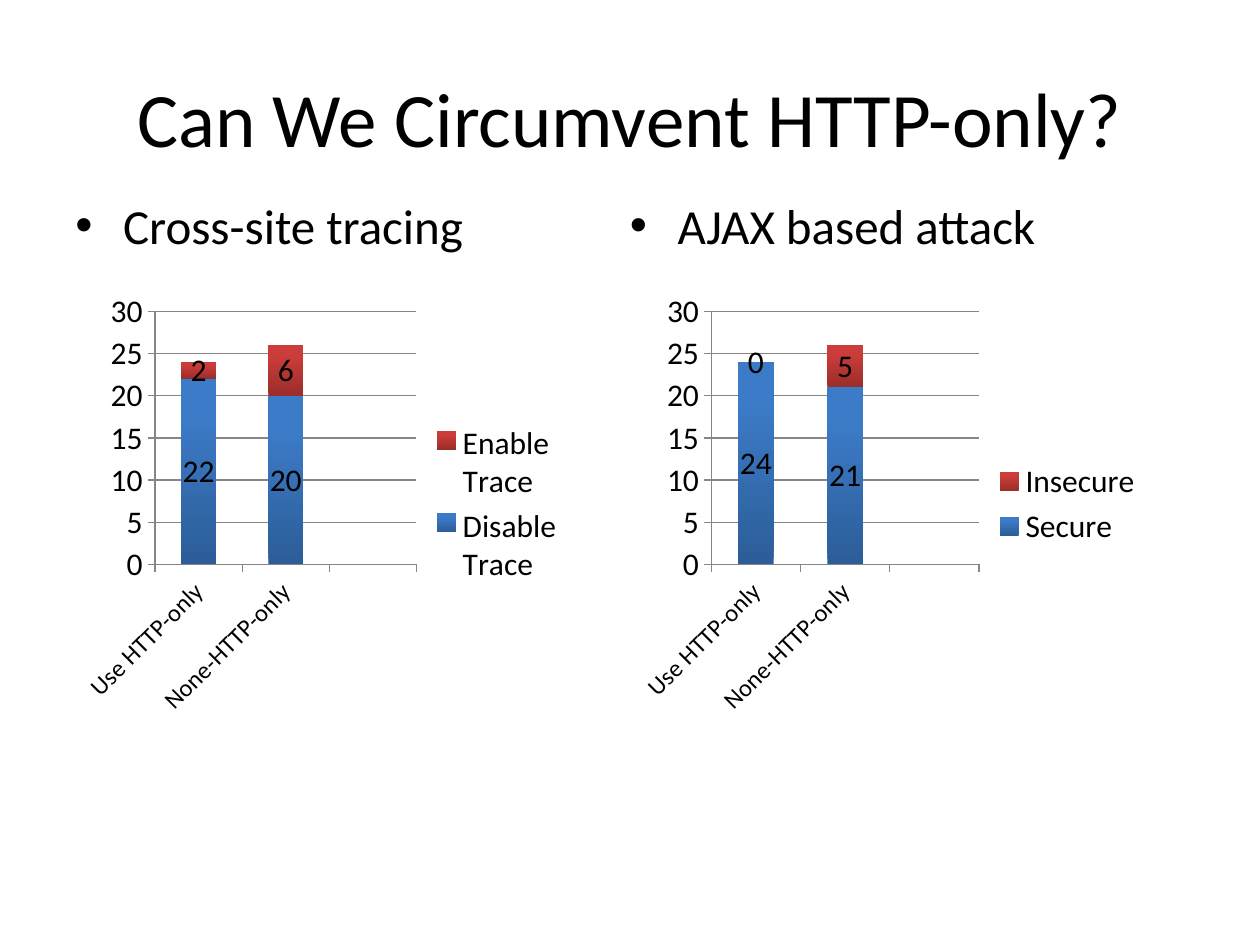
from dataclasses import dataclass

from lxml.etree import SubElement
from pptx import Presentation
from pptx.chart.chart import Chart
from pptx.chart.data import CategoryChartData
from pptx.dml.color import RGBColor
from pptx.enum.chart import XL_CHART_TYPE, XL_LEGEND_POSITION, XL_TICK_MARK
from pptx.enum.text import MSO_ANCHOR, PP_ALIGN
from pptx.oxml.ns import qn
from pptx.slide import Slide
from pptx.util import Inches, Pt


@dataclass(frozen=True)
class Theme:
    font: str = "Calibri"
    ink: RGBColor = RGBColor(0, 0, 0)
    rule: RGBColor = RGBColor(0x86, 0x86, 0x86)
    # Bottom and top colour of the bars, one pair per series
    bars: tuple = (("2C5D98", "3C7BC7"), ("9B2D2A", "CB3D3A"))
    title: int = 44
    body: int = 28
    chart: int = 18
    category: int = 14


@dataclass(frozen=True)
class Attack:
    heading: str
    text_left: float
    chart_left: float
    chart_width: float
    series: dict[str, tuple]


THEME = Theme()
MARGIN = 0.5
COLUMN_WIDTH = 4.4
CATEGORIES = ("Use HTTP-only", "None-HTTP-only", "")
ATTACKS = (
    Attack("Cross-site tracing", MARGIN, 0.58, 4,
           {"Disable Trace": (22, 20, None), "Enable Trace": (2, 6, None)}),
    Attack("AJAX based attack", MARGIN + COLUMN_WIDTH, 5, 4.17,
           {"Secure": (24, 21, None), "Insecure": (0, 5, None)}),
)


def style_font(font, size: int) -> None:
    font.name = THEME.font
    font.size = Pt(size)
    font.color.rgb = THEME.ink


def add_title(page: Slide, text: str) -> None:
    box = page.shapes.title
    box.left, box.top = Inches(MARGIN), Inches(0.3)
    box.width, box.height = Inches(9), Inches(1.25)
    box.text_frame.text = text
    box.text_frame.vertical_anchor = MSO_ANCHOR.MIDDLE
    para = box.text_frame.paragraphs[0]
    para.alignment = PP_ALIGN.CENTER
    style_font(para.font, THEME.title)


def add_heading(page: Slide, attack: Attack) -> None:
    box = page.shapes.add_textbox(Inches(attack.text_left), Inches(1.5),
                                  Inches(COLUMN_WIDTH), Inches(0.65))
    box.text_frame.word_wrap = True
    para = box.text_frame.paragraphs[0]
    para.text = attack.heading
    style_font(para.font, THEME.body)
    # Hanging bullet
    properties = para._p.get_or_add_pPr()
    properties.set("marL", str(Inches(0.38)))
    properties.set("indent", str(-Inches(0.38)))
    bullet_font = properties.makeelement(qn("a:buFont"), {"typeface": "Arial"})
    bullet = properties.makeelement(qn("a:buChar"), {"char": "•"})
    properties.insert(0, bullet_font)
    properties.insert(1, bullet)


def style_axes(chart: Chart) -> None:
    for axis in (chart.category_axis, chart.value_axis):
        axis.major_tick_mark = XL_TICK_MARK.OUTSIDE
        axis.minor_tick_mark = XL_TICK_MARK.NONE
        axis.format.line.color.rgb = THEME.rule
    values = chart.value_axis
    values.minimum_scale, values.maximum_scale, values.major_unit = 0, 30, 5
    values.major_gridlines.format.line.color.rgb = THEME.rule
    # Slanted category names
    style_font(chart.category_axis.tick_labels.font, THEME.category)
    text = chart.category_axis._element.find(qn("c:txPr"))
    body = text.find(qn("a:bodyPr"))
    if body is None:
        body = SubElement(text, qn("a:bodyPr"))
    body.set("rot", str(-45 * 60000))


def add_chart(page: Slide, attack: Attack) -> None:
    data = CategoryChartData()
    data.categories = CATEGORIES
    for name, values in attack.series.items():
        data.add_series(name, values)
    chart = page.shapes.add_chart(
        XL_CHART_TYPE.COLUMN_STACKED, Inches(attack.chart_left), Inches(2.25),
        Inches(attack.chart_width), Inches(3.5), data).chart
    chart.has_title = False
    style_font(chart.font, THEME.chart)
    chart.has_legend = True
    chart.legend.position = XL_LEGEND_POSITION.RIGHT
    chart.legend.include_in_layout = False
    style_axes(chart)

    plot = chart.plots[0]
    plot.vary_by_categories = False
    plot.gap_width, plot.overlap = 150, 100
    for series, shades in zip(plot.series, THEME.bars):
        fill = series.format.fill
        fill.gradient()
        fill.gradient_angle = 90
        for stop, shade, position in zip(fill.gradient_stops, shades, (0, 0.8)):
            stop.color.rgb = RGBColor.from_string(shade)
            stop.position = position
        series.data_labels.show_value = True
        style_font(series.data_labels.font, THEME.chart)


def main() -> None:
    deck = Presentation()
    deck.slide_width, deck.slide_height = Inches(10), Inches(7.5)
    page = deck.slides.add_slide(deck.slide_layouts[5])
    add_title(page, "Can We Circumvent HTTP-only?")
    for attack in ATTACKS:
        add_heading(page, attack)
        add_chart(page, attack)
    deck.save("out.pptx")


if __name__ == "__main__":
    main()
